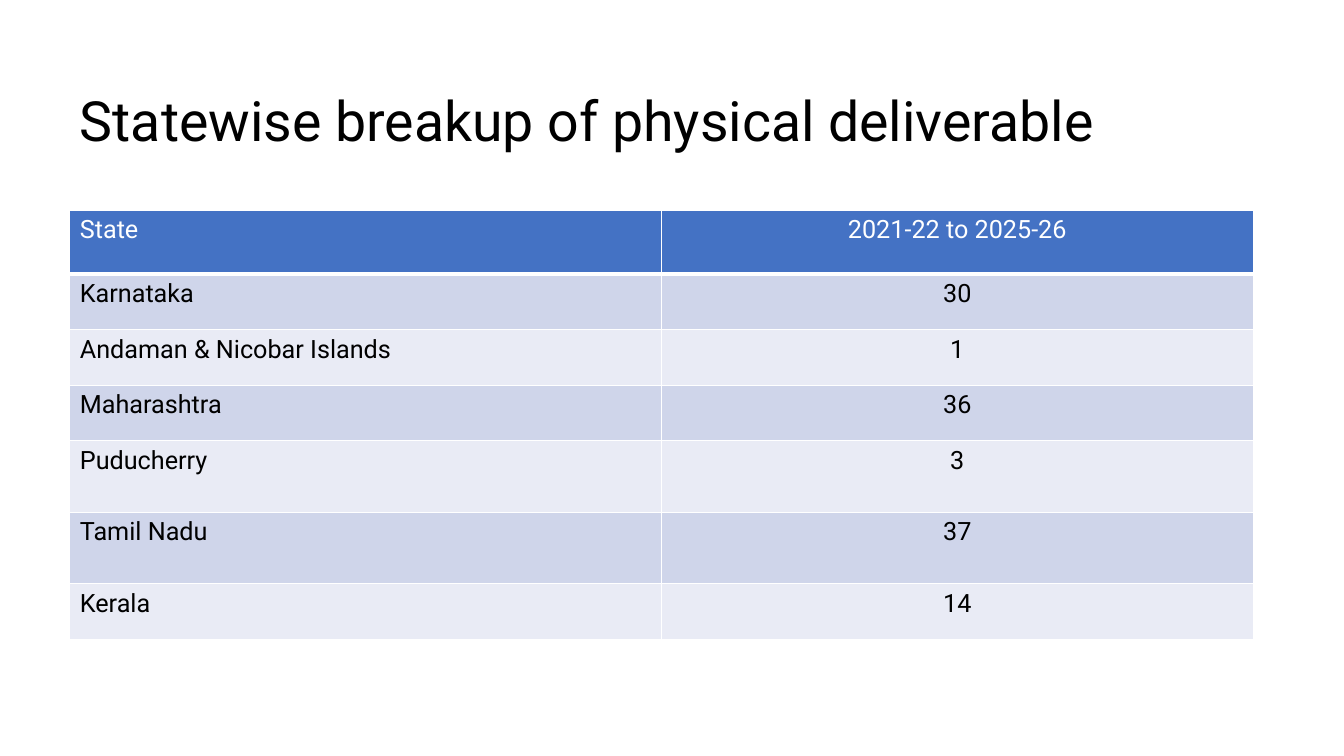
from dataclasses import dataclass

from lxml.etree import SubElement
from pptx import Presentation
from pptx.dml.color import RGBColor
from pptx.enum.text import MSO_ANCHOR as Anchor, MSO_AUTO_SIZE as AutoSize, PP_ALIGN as Align
from pptx.oxml.ns import qn
from pptx.slide import Slide
from pptx.table import _Cell as Cell
from pptx.text.text import _Paragraph as Paragraph
from pptx.util import Cm, Pt

COLORS = {
    "black": "000000",
    "white": "FFFFFF",
    "header": "4472C4",
    "odd": "CFD5EA",
    "even": "E9EBF5",
}
FONT = "Roboto"


@dataclass(frozen=True)
class StateRow:
    state: str
    deliverable: str
    height: float


HEADER = StateRow("State", "2021-22 to 2025-26", 1.62)
STATES = [
    StateRow("Karnataka", "30", 1.4),
    StateRow("Andaman & Nicobar Islands", "1", 1.4),
    StateRow("Maharashtra", "36", 1.4),
    StateRow("Puducherry", "3", 1.8),
    StateRow("Tamil Nadu", "37", 1.8),
    StateRow("Kerala", "14", 1.4),
]


def format_runs(paragraph: Paragraph, size: float, color: str) -> None:
    for run in paragraph.runs:
        run.font.name = FONT
        run.font.size = Pt(size)
        run.font.bold = False
        run.font.color.rgb = RGBColor.from_string(COLORS[color])


def set_borders(cell: Cell, top: float, bottom: float) -> None:
    properties = cell._tc.get_or_add_tcPr()
    for side, width in (("L", 1), ("R", 1), ("T", top), ("B", bottom)):
        line = SubElement(properties, qn(f"a:ln{side}"), w=str(Pt(width)))
        fill = SubElement(line, qn("a:solidFill"))
        SubElement(fill, qn("a:srgbClr"), val=COLORS["white"])


def add_title(slide: Slide, text: str) -> None:
    title = slide.shapes.title
    title.left, title.top, title.width, title.height = Cm(1.76), Cm(1.45), Cm(30.94), Cm(3.3)
    text_frame = title.text_frame
    text_frame.text = text
    text_frame.auto_size = AutoSize.NONE
    text_frame.vertical_anchor = Anchor.MIDDLE
    paragraph = text_frame.paragraphs[0]
    paragraph.alignment = Align.LEFT
    paragraph.line_spacing = 0.9
    format_runs(paragraph, 39.6, "black")


def add_state_table(slide: Slide, rows: list[StateRow]) -> None:
    height = sum(row.height for row in rows)
    table = slide.shapes.add_table(
        len(rows), 2, Cm(1.76), Cm(5.29), Cm(29.82), Cm(height)
    ).table
    for index, row in enumerate(rows):
        table.rows[index].height = Cm(row.height)
        is_header = index == 0
        fill = "header" if is_header else "odd" if index % 2 else "even"
        columns = ((row.state, Align.LEFT), (row.deliverable, Align.CENTER))
        for column, (text, alignment) in enumerate(columns):
            cell = table.cell(index, column)
            set_borders(cell, 3 if index == 1 else 1, 3 if is_header else 1)
            cell.fill.solid()
            cell.fill.fore_color.rgb = RGBColor.from_string(COLORS[fill])
            cell.text_frame.text = text
            paragraph = cell.text_frame.paragraphs[0]
            paragraph.alignment = alignment
            format_runs(paragraph, 18, "white" if is_header else "black")


def main() -> None:
    presentation = Presentation()
    presentation.slide_width, presentation.slide_height = Cm(33.87), Cm(19.05)
    slide = presentation.slides.add_slide(presentation.slide_layouts[5])
    add_title(slide, "Statewise breakup of physical deliverable")
    add_state_table(slide, [HEADER, *STATES])
    presentation.save("out.pptx")


if __name__ == "__main__":
    main()
